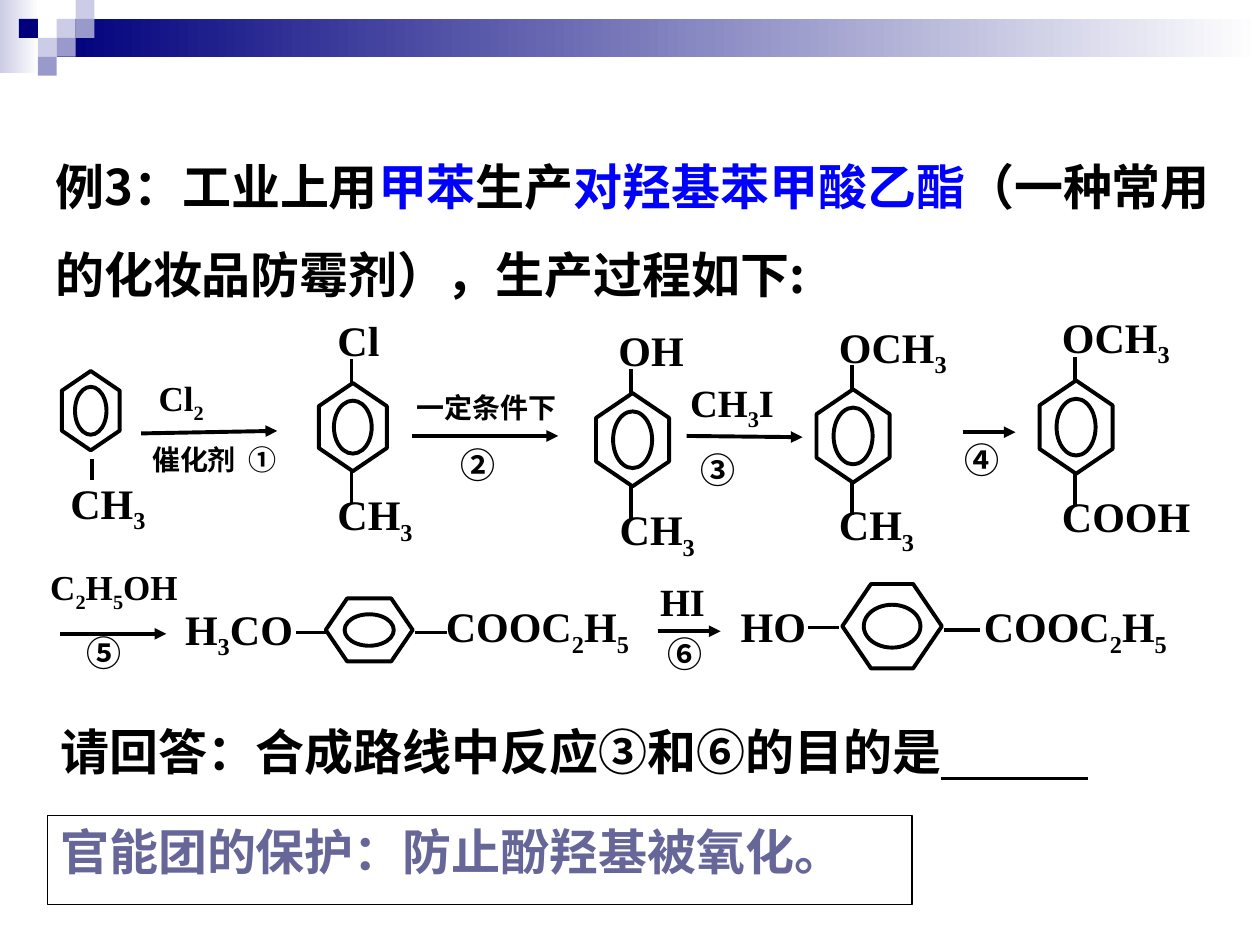
"""Build a slide on the synthesis route from toluene to ethyl p-hydroxybenzoate."""
from itertools import groupby

from lxml import etree
from pptx import Presentation
from pptx.dml.color import RGBColor
from pptx.enum.shapes import MSO_CONNECTOR, MSO_SHAPE
from pptx.enum.text import MSO_ANCHOR, MSO_AUTO_SIZE, PP_ALIGN
from pptx.oxml.ns import qn
from pptx.util import Cm, Pt

RECT, OVAL, HEXAGON = MSO_SHAPE.RECTANGLE, MSO_SHAPE.OVAL, MSO_SHAPE.HEXAGON
STRAIGHT = MSO_CONNECTOR.STRAIGHT
LEFT, JUSTIFY = PP_ALIGN.LEFT, PP_ALIGN.JUSTIFY
TOP = MSO_ANCHOR.TOP
GROW, FIXED = MSO_AUTO_SIZE.SHAPE_TO_FIT_TEXT, MSO_AUTO_SIZE.NONE

INCH = 2.54
THEME = {
    "ink": RGBColor(0x00, 0x00, 0x00),
    "key": RGBColor(0x00, 0x00, 0xFF),
    "answer": RGBColor(0x66, 0x66, 0x99),
    "navy": RGBColor(0x00, 0x00, 0x7D),
    "pale": RGBColor(0xCC, 0xCC, 0xE6),
    "mid": RGBColor(0x99, 0x99, 0xCC),
    "white": RGBColor(0xFF, 0xFF, 0xFF),
    "body": Pt(28),
    "formula": Pt(24),
    "reagent": Pt(22),
    "step": Pt(20),
    "note": Pt(16),
    "bond": Pt(2.25),
    "frame": Pt(0.75),
    "latin": "Times New Roman",
    "cjk": "Noto Sans CJK SC",
}

prs = Presentation()
prs.slide_width, prs.slide_height = Cm(10 * INCH), Cm(7.5 * INCH)
s = prs.slides.add_slide(prs.slide_layouts[6])


def add_shape(kind, at, fill=None, line=None, rotation=0):
    sp = s.shapes.add_shape(kind, *[Cm(v * INCH) for v in at])
    sp.shadow.inherit = False
    sp.rotation = rotation
    if fill:
        sp.fill.solid()
        sp.fill.fore_color.rgb = THEME[fill]
    else:
        sp.fill.background()
    if line:
        sp.line.color.rgb = THEME["ink"]
        sp.line.width = THEME[line]
    else:
        sp.line.fill.background()
    return sp


def add_text(sp, runs, size, font, wrap=True, fit=GROW, align=LEFT, spacing=None):
    tf = sp.text_frame
    frame_format = {"word_wrap": wrap, "auto_size": fit, "vertical_anchor": TOP}
    for name, value in frame_format.items():
        setattr(tf, name, value)
    p = tf.paragraphs[0]
    p.alignment, p.line_spacing = align, spacing
    for text, color, extra in runs:
        r = p.add_run()
        r.text = text
        run_format = {"size": THEME[size], "name": THEME[font], "bold": True}
        for name, value in run_format.items():
            setattr(r.font, name, value)
        r.font.color.rgb = THEME[color]
        rPr = r._r.get_or_add_rPr()
        etree.SubElement(rPr, qn("a:ea"), typeface=THEME["cjk"])
        for name, value in extra.items():
            rPr.set(name, value)


for at, start in [((0, 0, 0.31, 0.58), "pale"), ((0.45, 0.15, 9.55, 0.3), "navy")]:
    sp = add_shape(RECT, at)
    sp.fill.gradient()
    sp.fill.gradient_angle = 0
    for stop, color, position in zip(sp.fill.gradient_stops, (start, "white"), (0, 1)):
        stop.color.rgb = THEME[color]
        stop.position = position

TILE = 0.15
for column, row, color in [
    (3, 1, "pale"), (4, 0, "pale"), (4, 1, "mid"), (2, 2, "pale"),
    (1, 1, "navy"), (3, 2, "mid"), (2, 3, "mid"),
]:
    add_shape(RECT, (column * TILE, row * TILE, TILE, TILE), color)

question = [
    ("例3：工业上用", "ink", {}),
    ("甲苯", "key", {}),
    ("生产", "ink", {}),
    ("对羟基苯甲酸乙酯", "key", {}),
    ("（一种常用的化妆品防霉剂），生产过程如下:", "ink", {}),
]
prompt = [
    ("请回答：合成路线中反应③和⑥的目的是", "ink", {}),
    ("　　　", "ink", {"u": "sng"}),
]
for at, runs, font, spacing in [
    ((0.34, 0.96, 9.36, 1.4), question, "cjk", 1.5),
    ((0.38, 5.68, 9.08, 1.25), prompt, "latin", None),
]:
    tb = s.shapes.add_textbox(*[Cm(v * INCH) for v in at])
    add_text(tb, runs, "body", font, fit=FIXED, align=JUSTIFY, spacing=spacing)

answer = add_shape(RECT, (0.38, 6.47, 6.86, 0.71), line="frame")
add_text(answer, [("官能团的保护：防止酚羟基被氧化。", "answer", {})],
         "body", "latin", fit=FIXED, align=JUSTIFY)

lines = [
    (0.73, 3.81, 0.73, 3.64, False),
    (7.49, 5, 7.78, 5, False),
    (6.41, 4.98, 6.66, 4.98, False),
    (3.29, 5.02, 3.55, 5.02, False),
    (2.35, 5.02, 2.61, 5.02, False),
    (1.12, 3.44, 2.2, 3.42, True),
    (3.27, 3.46, 4.43, 3.46, True),
    (5.45, 3.46, 6.37, 3.47, True),
    (7.64, 3.43, 8.06, 3.43, True),
    (0.48, 5.03, 1.32, 5.03, True),
    (5.22, 5.01, 5.72, 5.01, True),
]

for x, y, length, width, oval_length, oval_width, rotation, substituted in [
    (0.72, 3.26, 0.63, 0.46, 0.38, 0.25, 90, False),
    (2.8, 3.39, 0.7, 0.54, 0.42, 0.3, 90, True),
    (5.02, 3.49, 0.74, 0.58, 0.45, 0.31, 90, True),
    (6.77, 3.46, 0.74, 0.58, 0.45, 0.31, 90, True),
    (8.54, 3.39, 0.74, 0.58, 0.45, 0.31, 90, True),
    (2.93, 5, 0.69, 0.5, 0.39, 0.25, 0, False),
    (7.08, 4.97, 0.79, 0.67, 0.45, 0.34, 0, False),
]:
    for kind, w, h in [(OVAL, oval_length, oval_width), (HEXAGON, length, width)]:
        sp = add_shape(kind, (x - w / 2, y - h / 2, w, h), line="bond", rotation=rotation)
    sp.adjustments[0] = 0.34
    if substituted:
        top, bottom = y - length / 2, y + length / 2 - 0.01
        lines += [(x - 0.01, top, x - 0.01, top - 0.19, False),
                  (x - 0.01, bottom, x - 0.01, bottom + 0.27, False)]

for x1, y1, x2, y2, arrow in lines:
    cx = s.shapes.add_connector(STRAIGHT, *[Cm(v * INCH) for v in (x1, y1, x2, y2)])
    cx.line.color.rgb = THEME["ink"]
    cx.line.width = THEME["bond"]
    if arrow:
        etree.SubElement(cx.line._get_or_add_ln(), qn("a:tailEnd"), type="triangle")
    etree.SubElement(cx._element.spPr, qn("a:effectLst"))

for text, left, top, width, height, size, font, wrap in [
    ("CH3", 0.46, 3.74, 1.03, 0.5, "formula", "latin", True),
    ("Cl", 2.58, 2.45, 0.61, 0.48, "formula", "latin", True),
    ("CH3", 2.58, 3.83, 0.93, 0.48, "formula", "latin", True),
    ("OH", 4.81, 2.53, 0.85, 0.5, "formula", "latin", True),
    ("CH3", 4.82, 3.95, 0.99, 0.5, "formula", "latin", True),
    ("OCH3", 6.56, 2.5, 1.22, 0.5, "formula", "latin", True),
    ("CH3", 6.56, 3.91, 0.99, 0.5, "formula", "latin", True),
    ("OCH3", 8.33, 2.42, 1.22, 0.5, "formula", "latin", True),
    ("COOH", 8.33, 3.84, 1.46, 0.5, "formula", "latin", True),
    ("H3CO", 1.37, 4.74, 1.08, 0.5, "formula", "latin", False),
    ("COOC2H5", 3.44, 4.72, 2.22, 0.5, "formula", "latin", True),
    ("HO", 5.78, 4.72, 0.84, 0.5, "formula", "latin", True),
    ("COOC2H5", 7.71, 4.72, 1.75, 0.5, "formula", "latin", True),
    ("Cl2", 1.16, 2.94, 1.01, 0.43, "step", "latin", True),
    ("CH3I", 5.38, 2.96, 1.03, 0.47, "reagent", "latin", True),
    ("C2H5OH", 0.3, 4.44, 1.35, 0.44, "step", "latin", True),
    ("HI", 5.14, 4.54, 0.71, 0.47, "reagent", "latin", True),
    ("催化剂", 1.11, 3.46, 0.87, 0.37, "note", "cjk", False),
    ("①", 1.87, 3.46, 0.42, 0.37, "note", "cjk", False),
    ("一定条件下", 3.21, 3.05, 1.32, 0.37, "note", "cjk", False),
    ("②", 3.56, 3.47, 0.48, 0.44, "step", "cjk", False),
    ("③", 5.46, 3.51, 0.48, 0.44, "step", "cjk", False),
    ("④", 7.56, 3.43, 0.48, 0.44, "step", "cjk", False),
    ("⑤", 0.59, 4.96, 0.48, 0.44, "step", "cjk", True),
    ("⑥", 5.2, 4.97, 0.48, 0.44, "step", "cjk", False),
]:
    runs = [("".join(chars), "ink", {"baseline": "-25000"} if is_digit else {})
            for is_digit, chars in groupby(text, str.isdecimal)]
    tb = s.shapes.add_textbox(*[Cm(v * INCH) for v in (left, top, width, height)])
    add_text(tb, runs, size, font, wrap)

prs.save("out.pptx")
